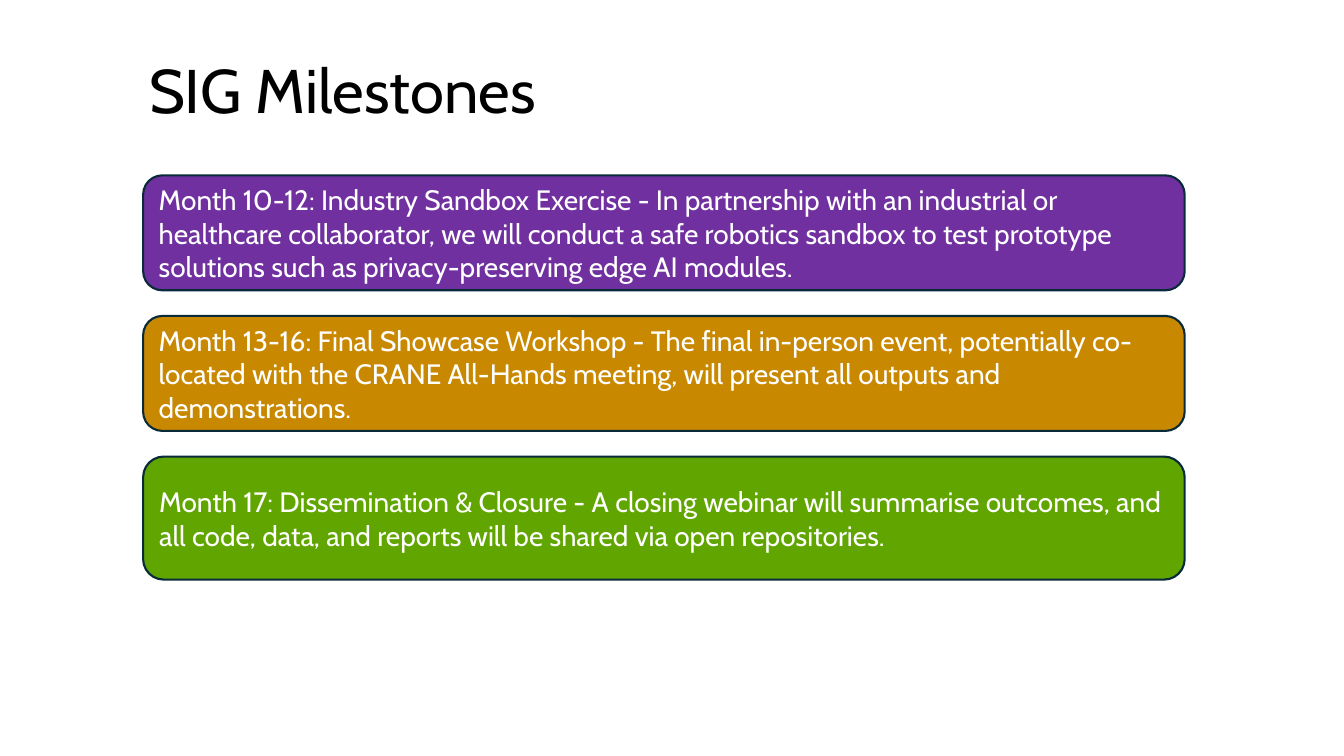
"""Builds the SIG Milestones slide."""
from pptx import Presentation
from pptx import util as u
from pptx.dml.color import RGBColor
from pptx.enum import shapes, text

BLACK = RGBColor(0x00, 0x00, 0x00)
WHITE = RGBColor(0xFF, 0xFF, 0xFF)
NAVY = RGBColor(0x09, 0x2A, 0x39)
PURPLE = RGBColor(0x70, 0x30, 0xA0)
AMBER = RGBColor(0xC8, 0x88, 0x00)
GREEN = RGBColor(0x60, 0xA5, 0x00)

TITLE = "SIG Milestones"
MILESTONES = [
    ("Month 10-12: Industry Sandbox Exercise - In partnership with an industrial or "
     "healthcare collaborator, we will conduct a safe robotics sandbox to test prototype "
     "solutions such as privacy-preserving edge AI modules.", PURPLE, 1.14),
    ("Month 13-16: Final Showcase Workshop - The final in-person event, potentially "
     "co-located with the CRANE All-Hands meeting, will present all outputs and "
     "demonstrations.", AMBER, 1.14),
    ("Month 17: Dissemination & Closure - A closing webinar will summarise outcomes, and "
     "all code, data, and reports will be shared via open repositories.", GREEN, 1.22),
]
LEFT, TOP, WIDTH, GAP = 1.42, 1.74, 10.33, 0.255
TITLE_FONT = {"name": "Cabin", "size": u.Pt(44)}
CARD_FONT = {"name": "Cabin", "size": u.Pt(20)}


def write(sp, content, font, color):
    tf = sp.text_frame
    tf.word_wrap = True
    tf.vertical_anchor = text.MSO_ANCHOR.MIDDLE
    p = tf.paragraphs[0]
    p.alignment = text.PP_ALIGN.LEFT
    r = p.add_run()
    r.text = content
    for name, value in font.items():
        setattr(r.font, name, value)
    r.font.color.rgb = color
    return p


def main():
    prs = Presentation()
    prs.slide_width, prs.slide_height = u.Inches(13.33), u.Inches(7.5)
    s = prs.slides.add_slide(prs.slide_layouts[6])

    title = s.shapes.add_textbox(*map(u.Inches, (1.38, 0.2, 11.5, 1.45)))
    write(title, TITLE, TITLE_FONT, BLACK).line_spacing = 0.9

    top = TOP
    for content, fill, height in MILESTONES:
        sp = s.shapes.add_shape(shapes.MSO_SHAPE.ROUNDED_RECTANGLE,
                                *map(u.Inches, (LEFT, top, WIDTH, height)))
        sp.shadow.inherit = False
        sp.fill.solid()
        sp.fill.fore_color.rgb = fill
        sp.line.color.rgb = NAVY
        sp.line.width = u.Pt(1.5)
        write(sp, content, CARD_FONT, WHITE)
        top += height + GAP

    prs.save("out.pptx")


if __name__ == "__main__":
    main()
